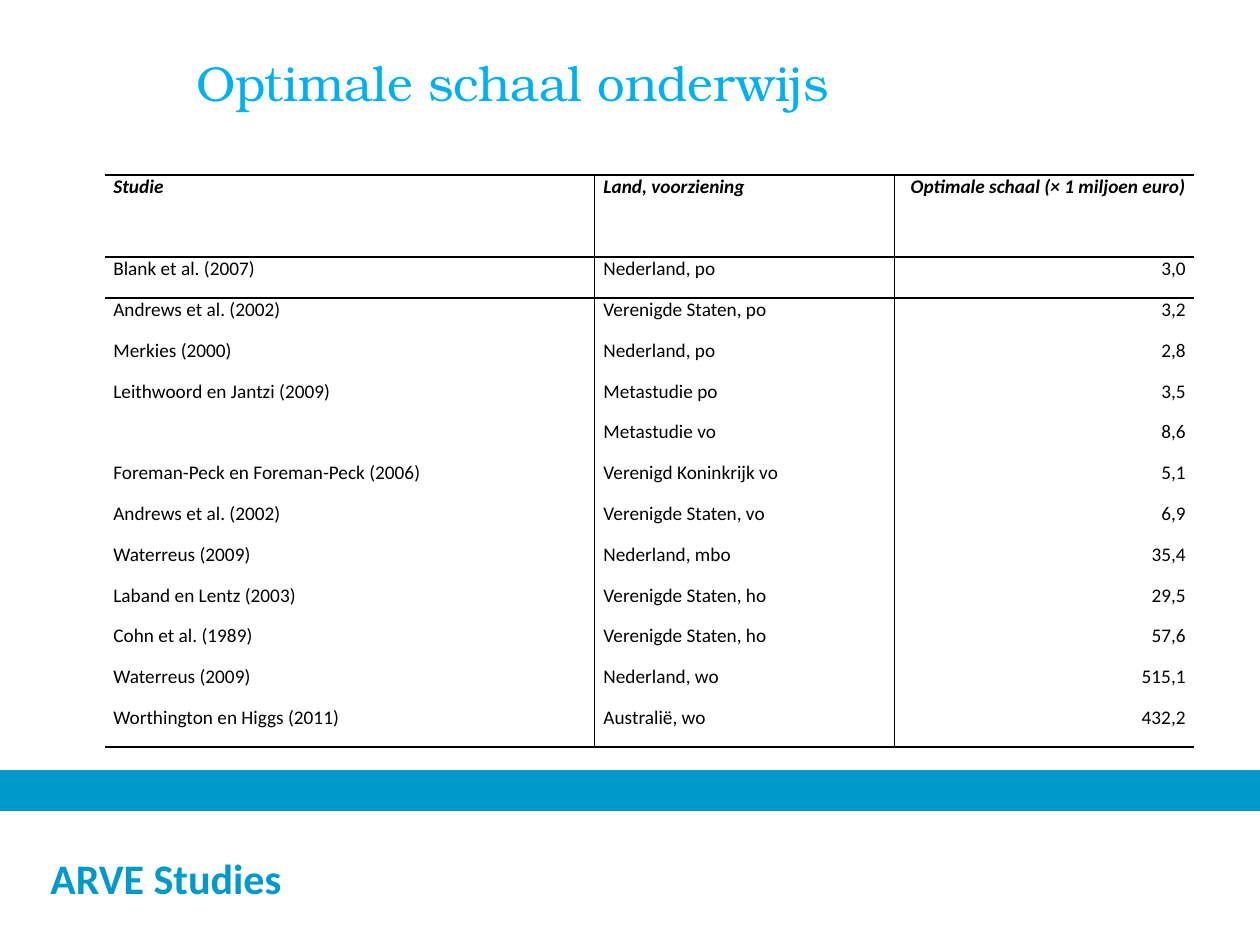
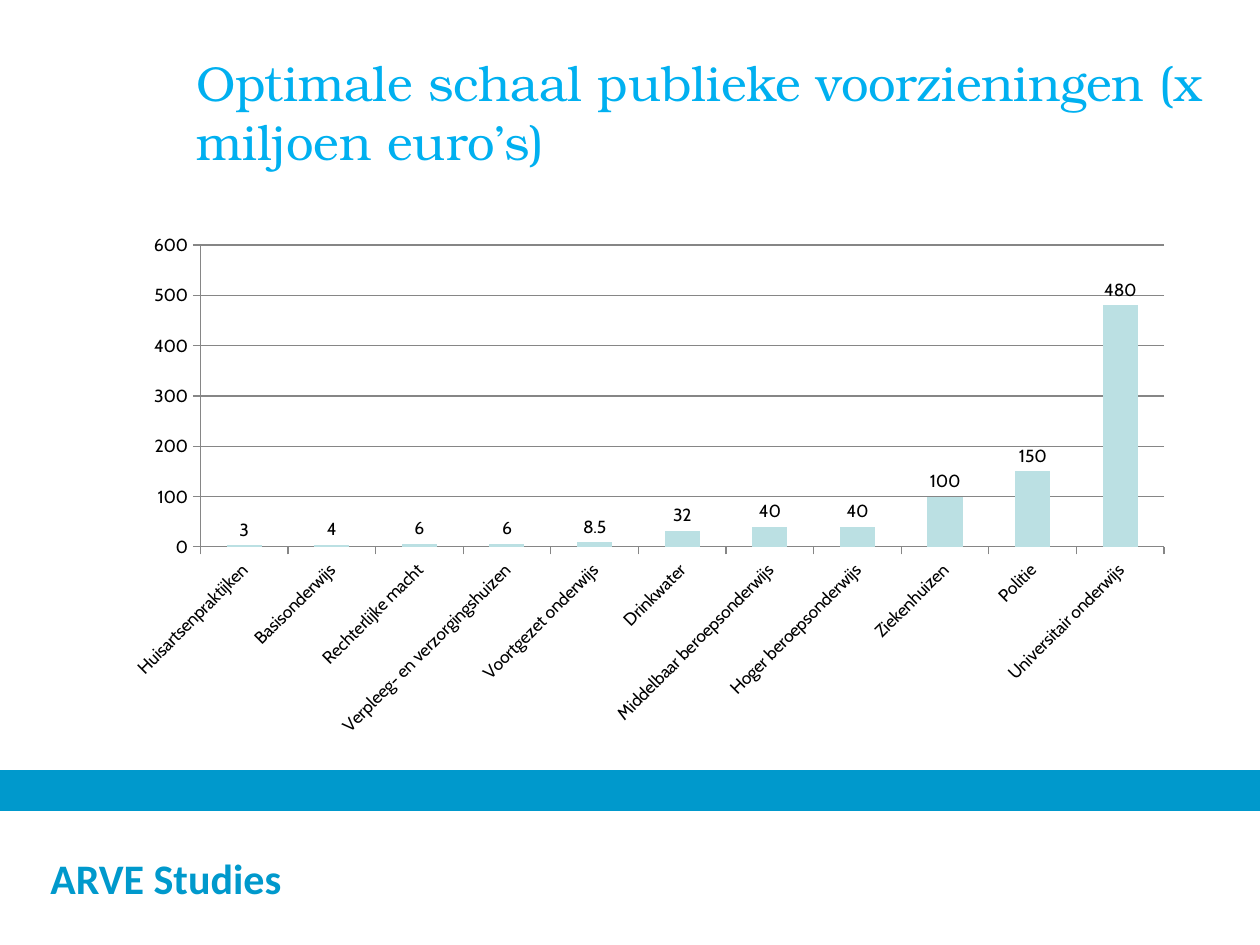
from pptx import Presentation
from pptx.chart.data import CategoryChartData
from pptx.dml.color import RGBColor
from pptx.enum.chart import XL_CHART_TYPE, XL_LABEL_POSITION, XL_TICK_MARK
from pptx.enum.shapes import MSO_SHAPE
from pptx.enum.text import MSO_ANCHOR, PP_ALIGN
from pptx.oxml import parse_xml
from pptx.oxml.ns import nsdecls, qn
from pptx.util import Inches, Pt

BLACK, WHITE, BAND_BLUE = "000000", "FFFFFF", "0099CC"
TITLE_BLUE, BAR_COLOUR, AXIS_GREY = "00B0F0", "BBE0E3", "868686"
TITLE_FONT = {"name": "TeX Gyre Bonum", "size": Pt(28)}
FOOTER_FONT = {"name": "Calibri", "size": Pt(24), "bold": True}
HEADER_FONT = {"name": "Calibri", "size": Pt(11), "bold": True, "italic": True}
BODY_FONT = {"name": "Calibri", "size": Pt(11), "bold": False, "italic": False}
CHART_FONT = {"name": "Cabin", "size": Pt(10)}
NO_STYLE = "{2D5ABB26-0587-4C30-8999-92F81FD0307C}"


def colour(hex_code):
    return RGBColor.from_string(hex_code)


def format_font(font, values, hex_code):
    for name, value in values.items():
        setattr(font, name, value)
    font.color.rgb = colour(hex_code)


presentation = Presentation()
presentation.slide_width = Inches(10)
presentation.slide_height = Inches(7.5)

# Shared frame: footer, band and title
slides = []
for title in ("Optimale schaal onderwijs",
              "Optimale schaal publieke voorzieningen (x miljoen euro’s)"):
    slide = presentation.slides.add_slide(presentation.slide_layouts[6])
    slides.append(slide)

    for top, height, fill in ((6.44, 1.06, WHITE), (6.12, 0.31, BAND_BLUE)):
        shape = slide.shapes.add_shape(MSO_SHAPE.RECTANGLE, 0, Inches(top),
                                       Inches(10), Inches(height))
        shape.shadow.inherit = False
        shape.fill.solid()
        shape.fill.fore_color.rgb = colour(fill)
        if fill == BAND_BLUE:
            shape.line.color.rgb = colour(BAND_BLUE)
            shape.line.width = Pt(0.75)
            continue
        shape.line.fill.background()
        shape.text_frame.margin_left = Inches(0.4)
        shape.text_frame.vertical_anchor = MSO_ANCHOR.MIDDLE
        paragraph = shape.text_frame.paragraphs[0]
        paragraph.alignment = PP_ALIGN.LEFT
        run = paragraph.add_run()
        run.text = "ARVE Studies"
        format_font(run.font, FOOTER_FONT, BAND_BLUE)

    title_box = slide.shapes.add_textbox(Inches(1.06), Inches(0.42),
                                         Inches(8.5), Inches(1.25))
    frame = title_box.text_frame
    frame.word_wrap = True
    for side in ("left", "top", "right", "bottom"):
        setattr(frame, f"margin_{side}", 0)
    paragraph = frame.paragraphs[0]
    paragraph.level = 1
    paragraph.space_after = Pt(18)
    properties = paragraph._p.get_or_add_pPr()
    properties.set("marL", str(Inches(0.5)))
    properties.set("indent", "0")
    run = paragraph.add_run()
    run.text = title
    format_font(run.font, TITLE_FONT, TITLE_BLUE)

table_slide, chart_slide = slides

# Table of studies
studies = [
    ("Studie", "Land, voorziening", "Optimale schaal (× 1 miljoen euro)"),
    ("Blank et al. (2007)", "Nederland, po", "3,0"),
    ("Andrews et al. (2002)", "Verenigde Staten, po", "3,2"),
    ("Merkies (2000)", "Nederland, po", "2,8"),
    ("Leithwoord en Jantzi (2009)", "Metastudie po", "3,5"),
    ("", "Metastudie vo", "8,6"),
    ("Foreman-Peck en Foreman-Peck (2006)", "Verenigd Koninkrijk vo", "5,1"),
    ("Andrews et al. (2002)", "Verenigde Staten, vo", "6,9"),
    ("Waterreus (2009)", "Nederland, mbo", "35,4"),
    ("Laband en Lentz (2003)", "Verenigde Staten, ho", "29,5"),
    ("Cohn et al. (1989)", "Verenigde Staten, ho", "57,6"),
    ("Waterreus (2009)", "Nederland, wo", "515,1"),
    ("Worthington en Higgs (2011)", "Australië, wo", "432,2"),
]
last_row = len(studies) - 1
header_height, table_height = 0.65, 4.54
table = table_slide.shapes.add_table(
    len(studies), 3, Inches(0.83), Inches(1.39),
    Inches(8.65), Inches(table_height)).table
table.first_row = table.horz_banding = False
table._tbl.tblPr.find(qn("a:tableStyleId")).text = NO_STYLE
for column, width in zip(table.columns, (3.89, 2.38, 2.38)):
    column.width = Inches(width)

for row_index, study in enumerate(studies):
    is_header = row_index == 0
    table.rows[row_index].height = Inches(
        header_height if is_header else (table_height - header_height) / last_row)
    for column_index, text in enumerate(study):
        cell = table.cell(row_index, column_index)
        cell.margin_left = cell.margin_right = Inches(0.07)
        cell.margin_top = cell.margin_bottom = 0

        # Rules around the header, below the last row and after column one
        borders = {
            "lnL": 1 if column_index == 1 else 0,
            "lnR": 1 if column_index == 0 else 0,
            "lnT": {0: 1.5, 1: 1}.get(row_index, 0),
            "lnB": {0: 1, last_row: 1.5}.get(row_index, 0),
        }
        for tag, width in borders.items():
            if width:
                cell._tc.get_or_add_tcPr().append(parse_xml(
                    f'<a:{tag} {nsdecls("a")} w="{Pt(width)}"><a:solidFill>'
                    f'<a:srgbClr val="{BLACK}"/></a:solidFill></a:{tag}>'))
        cell.fill.background()

        if text:
            paragraph = cell.text_frame.paragraphs[0]
            paragraph.alignment = PP_ALIGN.RIGHT if column_index == 2 else PP_ALIGN.LEFT
            if not is_header:
                paragraph.space_before = paragraph.space_after = Pt(1)
            run = paragraph.add_run()
            run.text = text
            format_font(run.font, HEADER_FONT if is_header else BODY_FONT, BLACK)

# Chart of public services
scales = {
    "Huisartsenpraktijken": 3,
    "Basisonderwijs": 4,
    "Rechterlijke macht": 6,
    "Verpleeg- en verzorgingshuizen": 6,
    "Voortgezet onderwijs": 8.5,
    "Drinkwater": 32,
    "Middelbaar beroepsonderwijs": 40,
    "Hoger beroepsonderwijs": 40,
    "Ziekenhuizen": 100,
    "Politie": 150,
    "Universitair onderwijs": 480,
}
chart_data = CategoryChartData()
chart_data.categories = list(scales)
chart_data.add_series("Series 1", list(scales.values()))
chart = chart_slide.shapes.add_chart(
    XL_CHART_TYPE.COLUMN_CLUSTERED, Inches(0.91), Inches(1.78),
    Inches(8.5), Inches(4.13), chart_data).chart
chart.has_legend = chart.has_title = False
format_font(chart.font, CHART_FONT, BLACK)

plot = chart.plots[0]
plot.gap_width = 150
plot.vary_by_categories = False
series = plot.series[0]
series.format.fill.solid()
series.format.fill.fore_color.rgb = colour(BAR_COLOUR)
plot.has_data_labels = True
labels = plot.data_labels
labels.show_value = True
labels.position = XL_LABEL_POSITION.OUTSIDE_END
format_font(labels.font, CHART_FONT, BLACK)

# Axes and gridlines
value_axis = chart.value_axis
value_axis.minimum_scale, value_axis.maximum_scale = 0, 600
value_axis.major_unit = 100
value_axis.has_major_gridlines = True
for axis in (chart.category_axis, value_axis):
    axis.major_tick_mark = XL_TICK_MARK.OUTSIDE
    format_font(axis.tick_labels.font, CHART_FONT, BLACK)
for line in (chart.category_axis.format.line, value_axis.format.line,
             value_axis.major_gridlines.format.line):
    line.color.rgb = colour(AXIS_GREY)
    line.width = Pt(0.75)
category_text = chart.category_axis._element.find(qn("c:txPr"))
category_text.find(qn("a:bodyPr")).set("rot", str(-45 * 60000))

# Fixed plot area, leaving room for the slanted labels
plot_area = chart._chartSpace.chart.plotArea
for layout in plot_area.findall(qn("c:layout")):
    plot_area.remove(layout)
position = "".join(f'<c:{name} val="{value}"/>' for name, value in (
    ("layoutTarget", "inner"), ("xMode", "edge"), ("yMode", "edge"),
    ("x", 0.08), ("y", 0.04), ("w", 0.9), ("h", 0.58)))
plot_area.insert(0, parse_xml(
    f'<c:layout {nsdecls("c")}><c:manualLayout>{position}</c:manualLayout></c:layout>'))

presentation.save("out.pptx")
